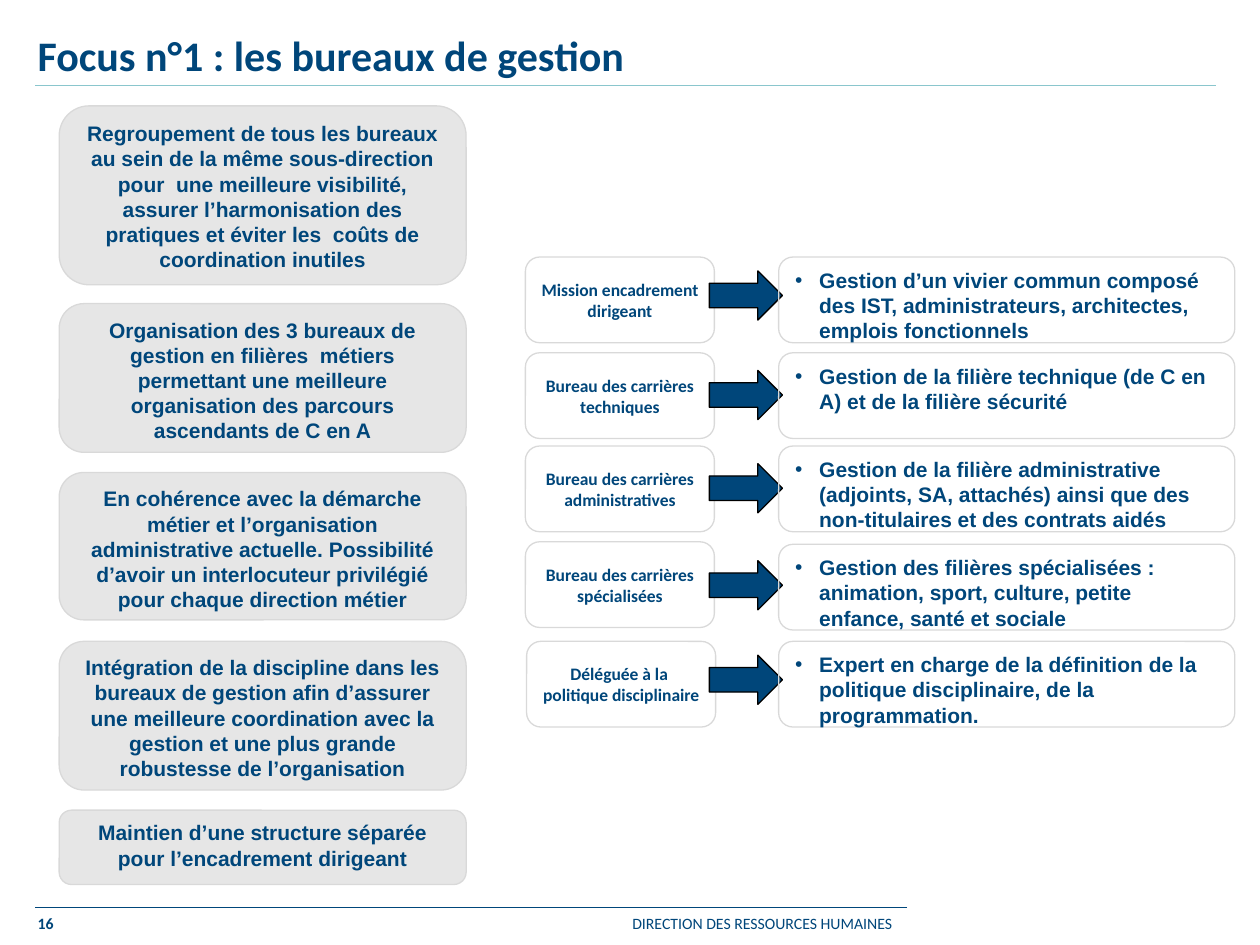
"""Build the slide on the management offices and their roles."""
from lxml.etree import SubElement
from pptx import Presentation
from pptx.dml.color import RGBColor
from pptx.enum.shapes import MSO_CONNECTOR as Connector, MSO_SHAPE as Shape
from pptx.enum.text import MSO_ANCHOR as Anchor, PP_ALIGN as Align
from pptx.oxml.ns import qn
from pptx.util import Inches, Pt

COLORS = {
    "navy": "00467A",
    "teal": "8AC6CD",
    "panel": "E6E6E6",
    "border": "D9D9D9",
    "black": "000000",
}


def write(box, text, *, size, font="Arial", bold=True, align=Align.LEFT,
          anchor=Anchor.TOP, inset=None, bullet=False):
    frame = box.text_frame
    frame.word_wrap = True
    frame.vertical_anchor = anchor
    if inset is not None:
        frame.margin_left = frame.margin_right = Inches(inset)
        frame.margin_top = frame.margin_bottom = Inches(inset)
    para = frame.paragraphs[0]
    para.text = text
    para.alignment = align
    if bullet:
        props = para._p.get_or_add_pPr()
        props.set("marL", str(Inches(0.19)))
        props.set("indent", str(-Inches(0.19)))
        SubElement(props, qn("a:buFont"), typeface="Arial")
        SubElement(props, qn("a:buChar"), char="•")
    for span in para.runs:
        span.font.name = font
        span.font.size = Pt(size)
        span.font.bold = bold
        span.font.color.rgb = RGBColor.from_string(COLORS["navy"])


def add_block(page, kind, left, top, width, height, *, fill=None, line="border"):
    block = page.shapes.add_shape(
        kind, Inches(left), Inches(top), Inches(width), Inches(height))
    block.shadow.inherit = False
    if fill:
        block.fill.solid()
        block.fill.fore_color.rgb = RGBColor.from_string(COLORS[fill])
    else:
        block.fill.background()
    block.line.color.rgb = RGBColor.from_string(COLORS[line])
    block.line.width = Pt(0.75)
    return block


deck = Presentation()
deck.slide_width, deck.slide_height = Inches(10), Inches(7.5)
page = deck.slides.add_slide(deck.slide_layouts[6])

for right, height, color in [(9.65, 0.68, "teal"), (7.2, 7.2, "navy")]:
    rule = page.shapes.add_connector(
        Connector.STRAIGHT, Inches(right), Inches(height), Inches(0.28), Inches(height))
    rule.line.color.rgb = RGBColor.from_string(COLORS[color])
    rule.line.width = Pt(0.75)
    SubElement(rule._element.spPr, qn("a:effectLst"))

labels = [
    ("DIRECTION DES RESSOURCES HUMAINES", (4.92, 7.2, 2.76, 0.25), 9, False, Anchor.TOP),
    ("16", (0.2, 7.2, 0.98, 0.24), 9, True, Anchor.TOP),
    ("Focus n°1 : les bureaux de gestion", (0.2, 0.29, 9.45, 0.28), 24, True, Anchor.MIDDLE),
]
for text, place, size, bold, anchor in labels:
    box = page.shapes.add_textbox(*[Inches(length) for length in place])
    write(box, text, size=size, font="Calibri", bold=bold, anchor=anchor)

principles = [
    (0.84, 1.42, "Regroupement de tous les bureaux au sein de la même sous-direction "
     "pour  une meilleure visibilité, assurer l’harmonisation des pratiques "
     "et éviter les  coûts de coordination inutiles"),
    (2.41, 1.18, "Organisation des 3 bureaux de gestion en filières  métiers permettant "
     "une meilleure organisation des parcours ascendants de C en A"),
    (3.75, 1.17, "En cohérence avec la démarche métier et l’organisation administrative "
     "actuelle. Possibilité d’avoir un interlocuteur privilégié pour chaque "
     "direction métier"),
    (5.09, 1.18, "Intégration de la discipline dans les bureaux de gestion afin d’assurer "
     "une meilleure coordination avec la gestion et une plus grande robustesse "
     "de l’organisation"),
    (6.43, 0.59, "Maintien d’une structure séparée pour l’encadrement dirigeant"),
]
for top, height, text in principles:
    panel = add_block(page, Shape.ROUNDED_RECTANGLE, 0.47, top, 3.23, height, fill="panel")
    write(panel, text, size=12, align=Align.CENTER)

offices = [
    (4.17, 2.04, 2.15, 2.04, "Mission encadrement dirigeant",
     "Gestion d’un vivier commun composé des IST, administrateurs, architectes, "
     "emplois fonctionnels"),
    (4.17, 2.8, 2.94, 2.8, "Bureau des carrières techniques",
     "Gestion de la filière technique (de C en A) et de la filière sécurité"),
    (4.17, 3.54, 3.68, 3.54, "Bureau des carrières administratives",
     "Gestion de la filière administrative (adjoints, SA, attachés) ainsi que des "
     "non-titulaires et des contrats aidés"),
    (4.17, 4.3, 4.45, 4.32, "Bureau des carrières spécialisées",
     "Gestion des filières spécialisées : animation, sport, culture, petite enfance, "
     "santé et sociale"),
    (4.18, 5.09, 5.2, 5.09, "Déléguée à la \vpolitique disciplinaire",
     "Expert en charge de la définition de la politique disciplinaire, "
     "de la programmation."),
]
for left, office_top, arrow_top, role_top, name, role in offices:
    office = add_block(page, Shape.ROUNDED_RECTANGLE, left, office_top, 1.5, 0.68)
    write(office, name, size=10, font="Calibri", align=Align.CENTER,
          anchor=Anchor.MIDDLE, inset=0.04)
    add_block(page, Shape.RIGHT_ARROW, 5.63, arrow_top, 0.58, 0.39, fill="navy", line="black")
    duty = add_block(page, Shape.ROUNDED_RECTANGLE, 6.18, role_top, 3.62, 0.68)
    write(duty, role, size=12, bullet=True)

deck.save("out.pptx")
